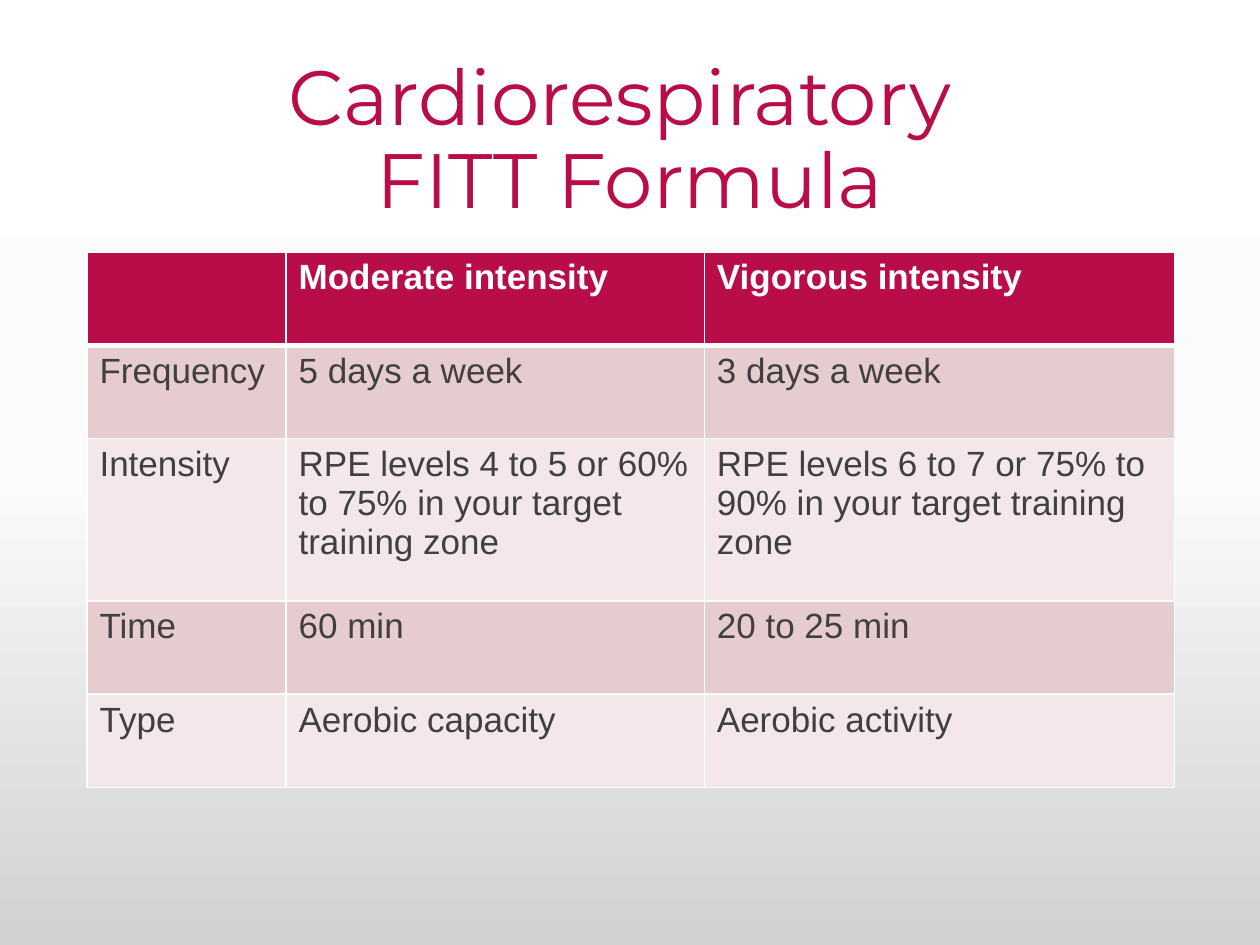
from copy import deepcopy
from dataclasses import dataclass

from lxml import etree
from pptx import Presentation
from pptx.dml.color import RGBColor
from pptx.enum.text import MSO_ANCHOR, PP_ALIGN
from pptx.oxml.ns import qn
from pptx.util import Inches, Pt

CENTER = PP_ALIGN.CENTER
MIDDLE = MSO_ANCHOR.MIDDLE
TITLE_ONLY = 5


@dataclass(frozen=True)
class Theme:
    """Colours, fonts and sizes of the deck."""
    accent: str = "B80D48"
    white: str = "FFFFFF"
    ink: str = "3F403F"
    bands: tuple = ("E6CCCF", "F3E7E9")
    backdrop: tuple = ((0, "FFFFFF"), (0.5, "FBFBFB"), (1, "D1D1D1"))
    title_font: str = "Montserrat"
    body_font: str = "Arial"
    title_size: int = 44
    body_size: int = 20
    rule: int = 1
    header_rule: int = 3


THEME = Theme()
TITLE = "Cardiorespiratory \vFITT Formula"
ROWS = (
    ("", "Moderate intensity", "Vigorous intensity"),
    ("Frequency", "5 days a week", "3 days a week"),
    ("Intensity",
     "RPE levels 4 to 5 or 60% to 75% in your target training zone",
     "RPE levels 6 to 7 or 75% to 90% in your target training zone"),
    ("Time", "60 min", "20 to 25 min"),
    ("Type", "Aerobic capacity", "Aerobic activity"),
)
COLUMN_WIDTHS = (1.58, 3.32, 3.73)
ROW_HEIGHTS = (0.74, 0.74, 1.29, 0.74, 0.74)


def style_text(para, font, size, color, bold=False):
    """Format every run of a paragraph."""
    for span in para.runs:
        span.font.name = font
        span.font.size = Pt(size)
        span.font.bold = bold
        span.font.color.rgb = RGBColor.from_string(color)


def paint_background(page):
    """Fill the page with a three-stop vertical gradient."""
    fill = page.background.fill
    fill.gradient()
    fill.gradient_angle = 270
    stop_list = page.element.find(".//" + qn("a:gsLst"))
    stop_list.insert(1, deepcopy(stop_list[0]))
    for stop, (position, color) in zip(fill.gradient_stops, THEME.backdrop):
        stop.position = position
        stop.color.rgb = RGBColor.from_string(color)


def place_title(page, left, top, width, height):
    """Put the heading into the title placeholder."""
    title = page.shapes.title
    title.left, title.top, title.width, title.height = left, top, width, height
    frame = title.text_frame
    frame.text = TITLE
    frame.word_wrap = True
    frame.vertical_anchor = MIDDLE
    para = frame.paragraphs[0]
    para.alignment = CENTER
    para.line_spacing = 0.9
    style_text(para, THEME.title_font, THEME.title_size, THEME.accent)


def draw_borders(cell, top, bottom):
    """Rule all four sides of a cell in white, widths in points."""
    properties = cell._tc.get_or_add_tcPr()
    sides = {"L": THEME.rule, "R": THEME.rule, "T": top, "B": bottom}
    for side, width in sides.items():
        line = etree.SubElement(properties, qn(f"a:ln{side}"), w=str(Pt(width)))
        solid = etree.SubElement(line, qn("a:solidFill"))
        etree.SubElement(solid, qn("a:srgbClr"), val=THEME.white)


def style_cell(cell, row):
    """Format a cell according to its row."""
    header = row == 0
    draw_borders(cell,
                 THEME.header_rule if row == 1 else THEME.rule,
                 THEME.header_rule if header else THEME.rule)
    cell.fill.solid()
    color = THEME.accent if header else THEME.bands[(row - 1) % 2]
    cell.fill.fore_color.rgb = RGBColor.from_string(color)
    style_text(cell.text_frame.paragraphs[0], THEME.body_font, THEME.body_size,
               THEME.white if header else THEME.ink, header)


def place_table(page, left, top, width, height):
    """Build the table of frequency, intensity, time and type."""
    table = page.shapes.add_table(len(ROWS), len(COLUMN_WIDTHS),
                                  left, top, width, height).table
    for column, size in zip(table.columns, COLUMN_WIDTHS):
        column.width = Inches(size)
    for row, size in zip(table.rows, ROW_HEIGHTS):
        row.height = Inches(size)
    for row, texts in enumerate(ROWS):
        for column, text in enumerate(texts):
            cell = table.cell(row, column)
            cell.text_frame.text = text
            style_cell(cell, row)


def main():
    """Build and save the deck."""
    deck = Presentation()
    deck.slide_width, deck.slide_height = Inches(10), Inches(7.5)
    page = deck.slides.add_slide(deck.slide_layouts[TITLE_ONLY])
    left, width = Inches(0.69), Inches(8.62)
    paint_background(page)
    place_title(page, left, Inches(0.4), width, Inches(1.45))
    place_table(page, left, Inches(2), width, Inches(sum(ROW_HEIGHTS)))
    deck.save("out.pptx")


if __name__ == "__main__":
    main()
